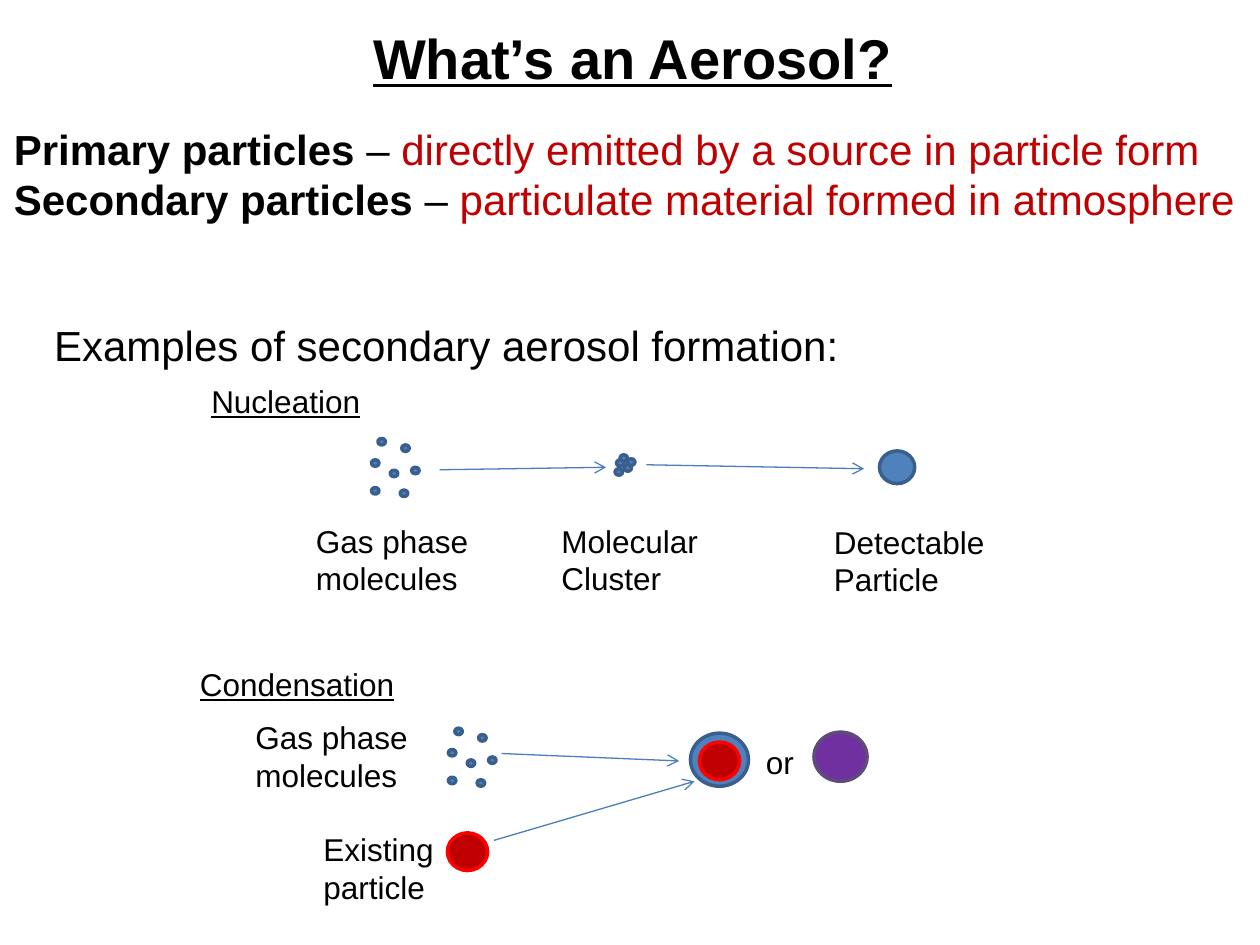
from dataclasses import dataclass

from lxml import etree
from pptx import Presentation
from pptx.dml.color import RGBColor
from pptx.enum.shapes import MSO_CONNECTOR, MSO_SHAPE
from pptx.enum.text import MSO_ANCHOR, MSO_AUTO_SIZE, PP_ALIGN
from pptx.oxml.ns import qn
from pptx.util import Cm, Pt

OVAL = MSO_SHAPE.OVAL
STRAIGHT = MSO_CONNECTOR.STRAIGHT
MIDDLE = MSO_ANCHOR.MIDDLE
CENTER = PP_ALIGN.CENTER
GROW = MSO_AUTO_SIZE.SHAPE_TO_FIT_TEXT


@dataclass(frozen=True)
class Paint:
    fill: str
    line: str


@dataclass(frozen=True)
class Theme:
    font: str = "Arial"
    text: str = "000000"
    accent: str = "C00000"
    arrow: str = "4B7EBC"
    gas: Paint = Paint("4F81BD", "3A5F8C")
    existing: Paint = Paint("C00000", "FF0000")
    mixed: Paint = Paint("7030A0", "604A7B")
    title_size: int = 32
    body_size: int = 24
    label_size: int = 18
    outline: float = 2
    arrow_width: float = 0.75


THEME = Theme()


@dataclass(frozen=True)
class Particle:
    x: float
    y: float
    w: float
    h: float
    paint: Paint


@dataclass(frozen=True)
class Arrow:
    x1: float
    y1: float
    x2: float
    y2: float


@dataclass(frozen=True)
class Label:
    lines: tuple[str, ...]
    x: float
    y: float
    w: float
    h: float
    size: int = THEME.label_size
    underline: bool = False
    wrap: bool = False


DOT_W, DOT_H = 0.15, 0.13
GAS_DOTS = ((0.13, 0), (0, 0.43), (0.61, 0.13), (0, 0.99),
            (0.38, 0.64), (0.81, 0.58), (0.58, 1.04))
CLUSTER_DOTS = ((0.03, 0.1), (0.1, 0), (0.18, 0.2), (0.25, 0.08), (0, 0.28))
DOT_GROUPS = (
    (7.49, 8.84, GAS_DOTS),
    (12.4, 9.17, CLUSTER_DOTS),
    (9.04, 14.68, GAS_DOTS),
)
PARTICLES = (
    Particle(17.73, 9.09, 0.71, 0.66, THEME.gas),
    Particle(13.92, 14.78, 1.17, 1.07, THEME.gas),
    Particle(14.1, 14.96, 0.81, 0.76, THEME.existing),
    Particle(9.02, 16.79, 0.81, 0.76, THEME.existing),
    Particle(16.41, 14.76, 1.07, 0.99, THEME.mixed),
)
ARROWS = (
    Arrow(8.86, 9.47, 12.22, 9.42),
    Arrow(13.03, 9.37, 17.42, 9.45),
    Arrow(10.11, 15.19, 13.69, 15.34),
    Arrow(9.96, 16.94, 14, 15.75),
)
GAS_TEXT = ("Gas phase", "molecules")
LABELS = (
    Label(("Examples of secondary aerosol formation:",), 0.84, 6.32, 16.48, 1.27,
          size=THEME.body_size),
    Label(("Nucleation",), 4.01, 7.57, 3.53, 1.02, underline=True),
    Label(GAS_TEXT, 6.12, 10.39, 3.78, 1.8),
    Label(("Molecular", "Cluster"), 11.07, 10.39, 3.3, 1.8),
    Label(("Detectable", "Particle"), 16.56, 10.41, 3.58, 1.8),
    Label(("Condensation",), 3.78, 13.28, 4.47, 1.02, underline=True),
    Label(GAS_TEXT, 4.9, 14.35, 3.78, 1.8),
    Label(("Existing particle",), 6.27, 16.61, 3.99, 1.8, wrap=True),
    Label(("or",), 15.19, 14.86, 1.09, 1.02),
)
DEFINITIONS = (
    ("Primary particles ", "directly emitted by a source in particle form"),
    ("Secondary particles ", "particulate material formed in atmosphere"),
)


def rgb(value: str) -> RGBColor:
    return RGBColor.from_string(value)


def add_box(s, x: float, y: float, w: float, h: float, wrap: bool = False):
    tf = s.shapes.add_textbox(Cm(x), Cm(y), Cm(w), Cm(h)).text_frame
    tf.word_wrap = wrap
    tf.auto_size = GROW
    return tf


def add_paragraph(tf, index: int, size: int):
    p = tf.add_paragraph() if index else tf.paragraphs[0]
    p.font.name = THEME.font
    p.font.size = Pt(size)
    return p


def add_label(s, label: Label):
    tf = add_box(s, label.x, label.y, label.w, label.h, label.wrap)
    for i, line in enumerate(label.lines):
        p = add_paragraph(tf, i, label.size)
        p.text = line
        p.font.underline = label.underline
        p.font.color.rgb = rgb(THEME.text)
    return tf


def add_title(s) -> None:
    title = Label(("What’s an Aerosol?",), 1.96, 0.3, 21.59, 1.7,
                  size=THEME.title_size, underline=True, wrap=True)
    tf = add_label(s, title)
    tf.auto_size = MSO_AUTO_SIZE.NONE
    tf.vertical_anchor = MIDDLE
    p = tf.paragraphs[0]
    p.alignment = CENTER
    p.font.bold = True


def add_definitions(s) -> None:
    tf = add_box(s, 0.03, 2.36, 26.14, 2.31)
    for i, (term, meaning) in enumerate(DEFINITIONS):
        p = add_paragraph(tf, i, THEME.body_size)
        for text, color, bold in ((term, THEME.text, True),
                                  ("– ", THEME.text, False),
                                  (meaning, THEME.accent, False)):
            r = p.add_run()
            r.text = text
            r.font.bold = bold
            r.font.color.rgb = rgb(color)


def add_particle(s, particle: Particle) -> None:
    sp = s.shapes.add_shape(OVAL, Cm(particle.x), Cm(particle.y),
                            Cm(particle.w), Cm(particle.h))
    sp.shadow.inherit = False
    sp.fill.solid()
    sp.fill.fore_color.rgb = rgb(particle.paint.fill)
    sp.line.color.rgb = rgb(particle.paint.line)
    sp.line.width = Pt(THEME.outline)


def add_arrow(s, arrow: Arrow) -> None:
    sp = s.shapes.add_connector(STRAIGHT, Cm(arrow.x1), Cm(arrow.y1),
                                Cm(arrow.x2), Cm(arrow.y2))
    sp.line.color.rgb = rgb(THEME.arrow)
    sp.line.width = Pt(THEME.arrow_width)
    etree.SubElement(sp.line._get_or_add_ln(), qn("a:tailEnd"), type="arrow")
    etree.SubElement(sp._element.spPr, qn("a:effectLst"))


def main() -> None:
    prs = Presentation()
    prs.slide_width, prs.slide_height = Cm(25.4), Cm(19.05)
    s = prs.slides.add_slide(prs.slide_layouts[6])
    add_title(s)
    add_definitions(s)
    for x, y, dots in DOT_GROUPS:
        for dx, dy in dots:
            add_particle(s, Particle(x + dx, y + dy, DOT_W, DOT_H, THEME.gas))
    for particle in PARTICLES:
        add_particle(s, particle)
    for arrow in ARROWS:
        add_arrow(s, arrow)
    for label in LABELS:
        add_label(s, label)
    prs.save("out.pptx")


if __name__ == "__main__":
    main()
